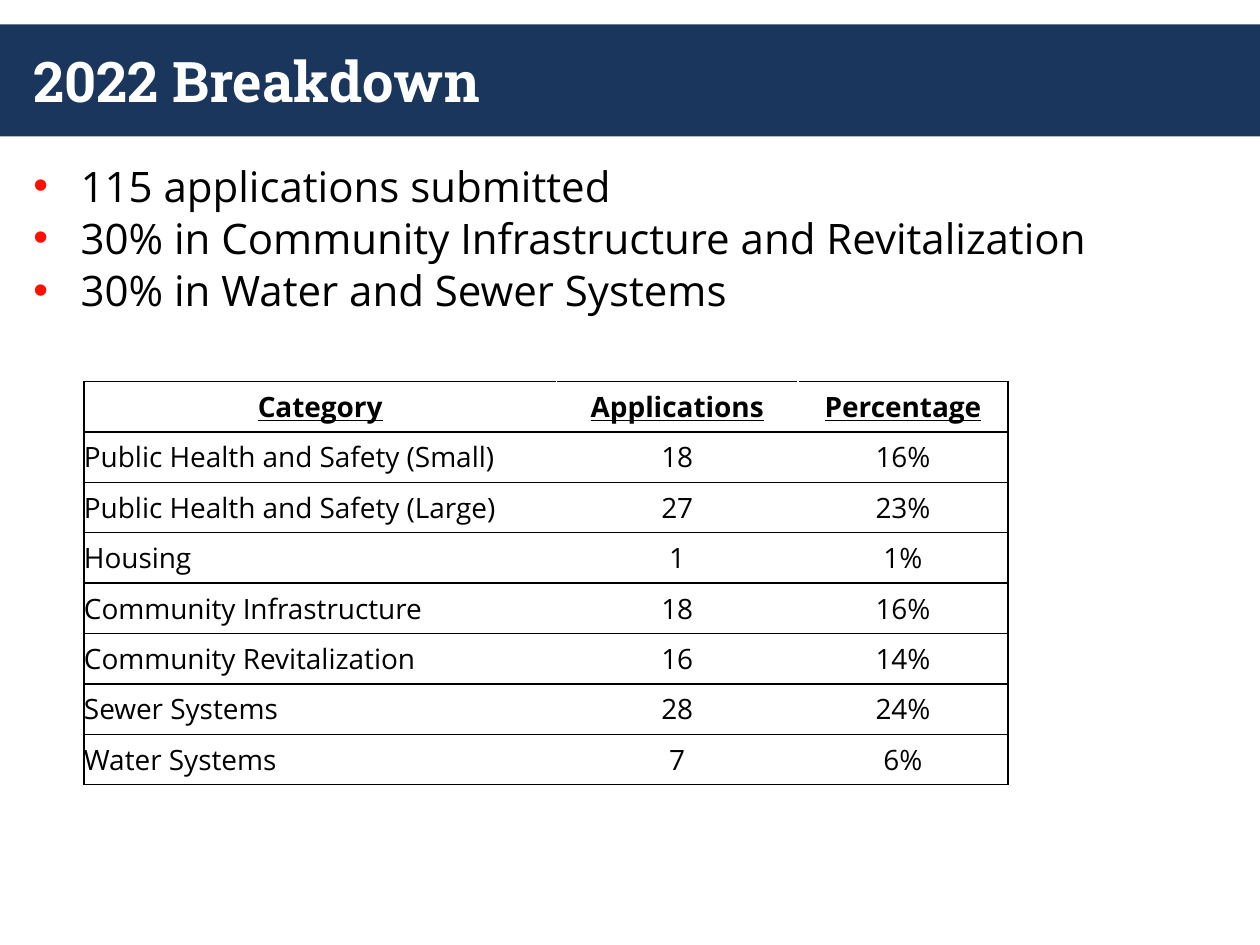
"""Build the 2022 application breakdown slide."""
from typing import NamedTuple

from lxml import etree
from pptx import Presentation
from pptx.dml.color import RGBColor
from pptx.enum import shapes, text
from pptx.oxml import ns
from pptx.util import Pt

HUES = {"navy": "1B365D", "white": "FFFFFF", "black": "000000", "red": "FF0F00"}


class Box(NamedTuple):
    left: float
    top: float
    width: float
    height: float

    def points(self) -> list:
        return [Pt(v) for v in self]


class Row(NamedTuple):
    name: str
    count: str
    share: str


BAND = Box(0, 14, 720, 64)
HEAD = Box(12, 14, 696, 64)
BODY = Box(12, 90, 696, 138)
GRID = Box(48, 218, 528, 230.4)
COLS = (270, 138, 120)
LINES = (
    "115 applications submitted",
    "30% in Community Infrastructure and Revitalization",
    "30% in Water and Sewer Systems",
)
ROWS = (
    Row("Category", "Applications", "Percentage"),
    Row("Public Health and Safety (Small)", "18", "16%"),
    Row("Public Health and Safety (Large)", "27", "23%"),
    Row("Housing", "1", "1%"),
    Row("Community Infrastructure", "18", "16%"),
    Row("Community Revitalization", "16", "14%"),
    Row("Sewer Systems", "28", "24%"),
    Row("Water Systems", "7", "6%"),
)


def color(hue: str) -> RGBColor:
    return RGBColor.from_string(HUES[hue])


def child(node, tag: str, **attrs: str):
    return etree.SubElement(node, ns.qn(tag), attrs)


def style(para, face: str, size: float, hue: str, bold: bool = False) -> None:
    font = para.font
    font.name, font.size, font.bold = face, Pt(size), bold
    font.color.rgb = color(hue)


def add_title(slide) -> None:
    title = slide.shapes.title
    title.left, title.top, title.width, title.height = HEAD.points()
    frame = title.text_frame
    frame.text = "2022 Breakdown"
    frame.auto_size = text.MSO_AUTO_SIZE.NONE
    frame.vertical_anchor = text.MSO_ANCHOR.MIDDLE
    para = frame.paragraphs[0]
    para.alignment = text.PP_ALIGN.LEFT
    style(para, "Roboto Slab", 32, "white", True)

    band = slide.shapes.add_shape(shapes.MSO_SHAPE.RECTANGLE, *BAND.points())
    band.shadow.inherit = False
    band.fill.solid()
    band.fill.fore_color.rgb = color("navy")
    band.line.fill.background()
    title.element.addprevious(band.element)


def add_list(slide) -> None:
    frame = slide.shapes.add_textbox(*BODY.points()).text_frame
    frame.word_wrap = True
    frame.margin_top = Pt(1.5)
    for i, line in enumerate(LINES):
        para = frame.add_paragraph() if i else frame.paragraphs[0]
        para.text = line
        props = para._p.get_or_add_pPr()
        props.set("marL", str(Pt(27)))
        props.set("indent", str(Pt(-27)))
        child(child(props, "a:buClr"), "a:srgbClr", val=HUES["red"])
        child(props, "a:buFont", typeface="Arial")
        child(props, "a:buChar", char="•")
        if i:
            para.space_before = Pt(1)
        style(para, "Open Sans", 24, "black")


def set_edges(cell, col: int) -> None:
    last = len(COLS) - 1
    hues = {
        "L": "white" if col else "black",
        "R": "white" if col < last else "black",
        "T": "black",
        "B": "black",
    }
    props = cell._tc.get_or_add_tcPr()
    for side, hue in hues.items():
        edge = child(props, f"a:ln{side}", w=str(Pt(1)))
        child(child(edge, "a:solidFill"), "a:srgbClr", val=HUES[hue])


def fill_cell(cell, word: str, row: int, col: int) -> None:
    set_edges(cell, col)
    cell.fill.background()
    cell.margin_left = cell.margin_right = cell.margin_top = cell.margin_bottom = 0
    cell.vertical_anchor = text.MSO_ANCHOR.MIDDLE
    cell.text = word
    para = cell.text_frame.paragraphs[0]
    head = row == 0
    mid = head or col > 0
    para.alignment = text.PP_ALIGN.CENTER if mid else text.PP_ALIGN.LEFT
    style(para, "Open Sans", 16, "black", head)
    para.font.underline = head


def add_grid(slide) -> None:
    table = slide.shapes.add_table(len(ROWS), len(COLS), *GRID.points()).table
    table.first_row = table.horz_banding = False
    for col, width in zip(table.columns, COLS):
        col.width = Pt(width)
    for r, row in enumerate(ROWS):
        table.rows[r].height = Pt(GRID.height / len(ROWS))
        for c, word in enumerate(row):
            fill_cell(table.cell(r, c), word, r, c)


def main() -> None:
    deck = Presentation()
    deck.slide_width, deck.slide_height = Pt(720), Pt(540)
    slide = deck.slides.add_slide(deck.slide_layouts[5])
    add_title(slide)
    add_list(slide)
    add_grid(slide)
    deck.save("out.pptx")


if __name__ == "__main__":
    main()
